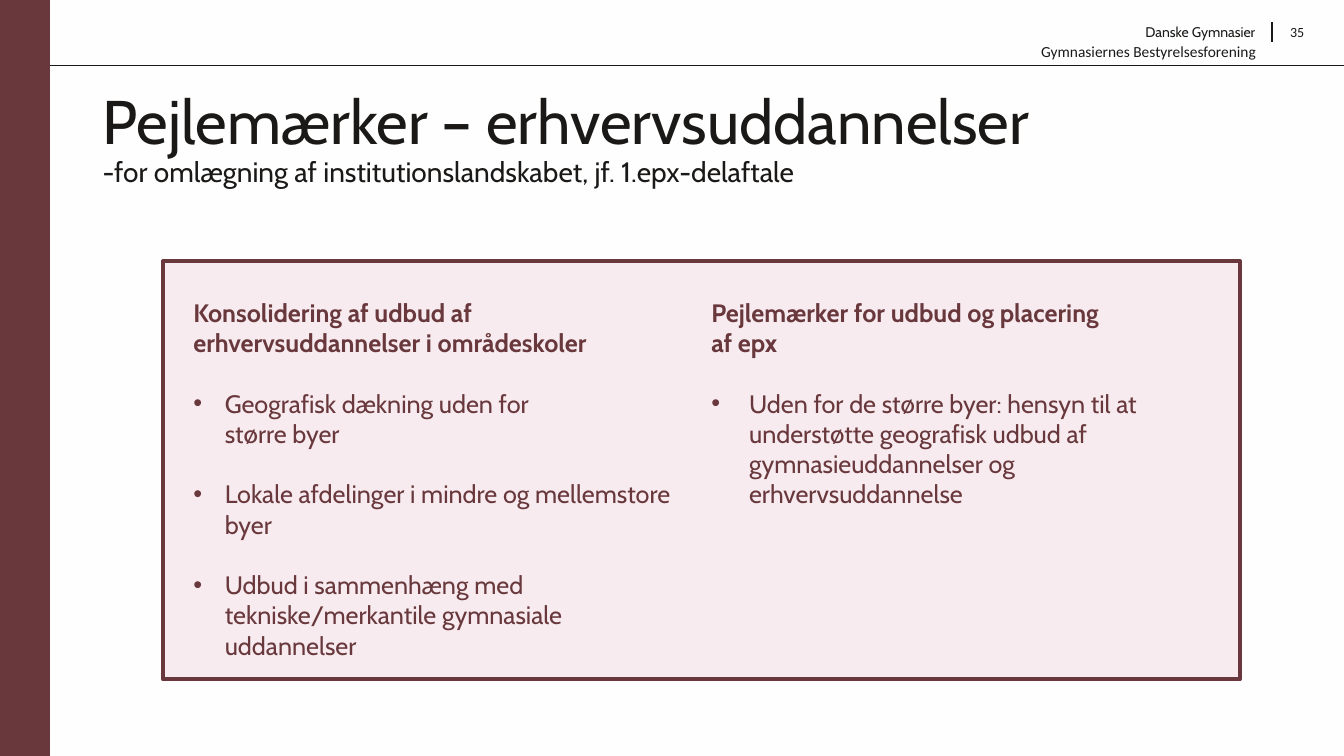
import pptx
import pptx.dml.color
import pptx.enum.shapes
import pptx.enum.text
import pptx.oxml.ns
import pptx.util
from lxml import etree

Pt = pptx.util.Pt
ALIGN = pptx.enum.text.PP_ALIGN
INK, MAROON, ROSE, PAPER = "1A1918", "68383C", "F7EBEF", "FFFEFE"
WIDTH, HEIGHT = 960, 540


def color(hex_string):
    return pptx.dml.color.RGBColor.from_string(hex_string)


class SlideBuilder:
    """Draws the elements of one slide in a shared style."""

    def __init__(self, slide, font="Cabin"):
        self.slide = slide
        self.font = font
        slide.background.fill.solid()
        slide.background.fill.fore_color.rgb = color(PAPER)

    def line(self, x1, y1, x2, y2, weight):
        rule = self.slide.shapes.add_connector(
            pptx.enum.shapes.MSO_CONNECTOR.STRAIGHT, Pt(x1), Pt(y1), Pt(x2), Pt(y2))
        rule.line.color.rgb = color(INK)
        rule.line.width = Pt(weight)
        etree.SubElement(rule._element.spPr, pptx.oxml.ns.qn("a:effectLst"))

    def box(self, x, y, width, height, fill, weight):
        panel = self.slide.shapes.add_shape(
            pptx.enum.shapes.MSO_SHAPE.RECTANGLE, Pt(x), Pt(y), Pt(width), Pt(height))
        panel.shadow.inherit = False
        panel.fill.solid()
        panel.fill.fore_color.rgb = color(fill)
        panel.line.color.rgb = color(MAROON)
        panel.line.width = Pt(weight)

    def frame(self, x, y, width, height):
        frame = self.slide.shapes.add_textbox(Pt(x), Pt(y), Pt(width), Pt(height)).text_frame
        frame.word_wrap = True
        return frame

    def run(self, paragraph, text, size, ink, bold=False, font=None):
        for index, part in enumerate(text.split("\n")):
            if index:
                paragraph.add_line_break()
            run = paragraph.add_run()
            run.text = part
            run.font.name = font or self.font
            run.font.size = Pt(size)
            run.font.bold = bold
            run.font.color.rgb = color(ink)

    def label(self, x, y, width, height, text, size, align=ALIGN.LEFT, font=None):
        paragraph = self.frame(x, y, width, height).paragraphs[0]
        paragraph.alignment = align
        self.run(paragraph, text, size, INK, font=font)

    def title(self, x, y, width, height, heading, subheading):
        paragraph = self.frame(x, y, width, height).paragraphs[0]
        paragraph.line_spacing = 0.9
        self.run(paragraph, heading, 44, INK)
        paragraph.add_line_break()
        self.run(paragraph, subheading, 20, INK)

    def column(self, x, y, width, height, heading, points, indent):
        frame = self.frame(x, y, width, height)
        self.run(frame.paragraphs[0], heading, 18, MAROON, bold=True)
        for point in points:
            paragraph = frame.add_paragraph()
            properties = paragraph._p.get_or_add_pPr()
            properties.set("marL", str(Pt(indent)))
            properties.set("indent", str(-Pt(indent)))
            bullet_font = etree.SubElement(properties, pptx.oxml.ns.qn("a:buFont"))
            bullet_font.set("typeface", "Arial")
            bullet = etree.SubElement(properties, pptx.oxml.ns.qn("a:buChar"))
            bullet.set("char", "•")
            paragraph.space_before = Pt(21.6)
            self.run(paragraph, point, 18, MAROON)


def main():
    deck = pptx.Presentation()
    deck.slide_width, deck.slide_height = Pt(WIDTH), Pt(HEIGHT)
    page = SlideBuilder(deck.slides.add_slide(deck.slide_layouts[6]))

    page.line(WIDTH, 46.8, 0, 46.8, 0.5)
    page.label(795.6, 13, 108, 19.4, "Danske Gymnasier", 10, align=ALIGN.RIGHT)
    page.line(908.6, 15.8, 908.6, 30.2, 0.75)
    page.label(914.4, 13, 35.3, 28.8, "35", 10, font="Calibri")
    page.title(66.2, 62, 828, 104.4, "Pejlemærker – erhvervsuddannelser",
               "-for omlægning af institutionslandskabet, jf. 1.epx-delaftale")
    page.box(0, 0, 35.3, HEIGHT, MAROON, 1)
    page.box(116.6, 186.5, 769, 298.8, ROSE, 3)
    page.column(131, 208.8, 370, 201.6,
                "Konsolidering af udbud af erhvervsuddannelser i områdeskoler",
                ["Geografisk dækning uden for \nstørre byer",
                 "Lokale afdelinger i mindre og mellemstore byer",
                 "Udbud i sammenhæng med tekniske/merkantile gymnasiale uddannelser"],
                22.5)
    page.column(501, 208.8, 365, 201.6,
                "Pejlemærker for udbud og placering \naf epx",
                ["Uden for de større byer: hensyn til at understøtte geografisk udbud af "
                 "gymnasieuddannelser og erhvervsuddannelse"],
                27)
    page.label(736.6, 26.6, 177.8, 20.9, "Gymnasiernes Bestyrelsesforening", 11, font="Calibri")

    deck.save("out.pptx")


if __name__ == "__main__":
    main()
